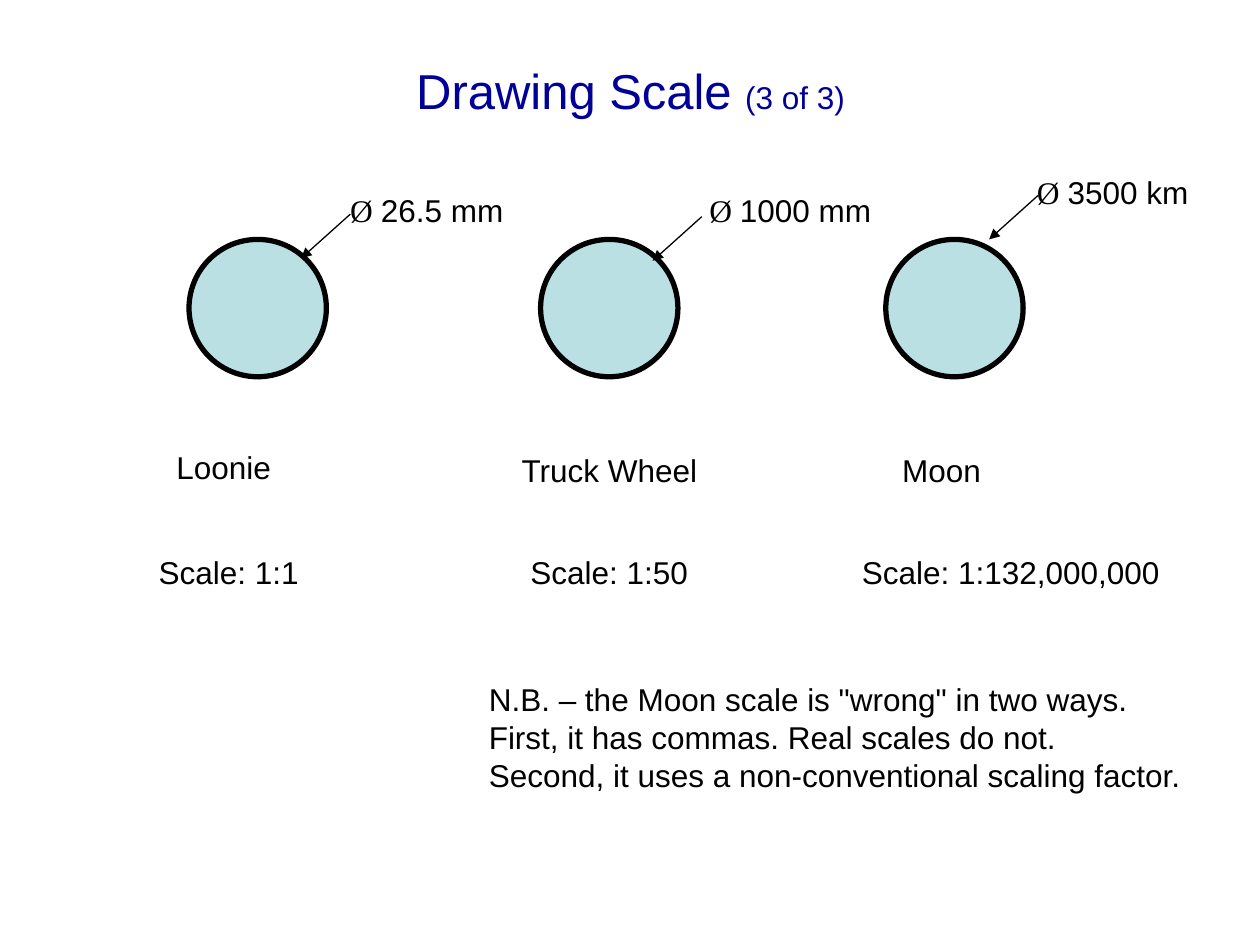
from lxml import etree
from pptx import Presentation
from pptx.dml.color import RGBColor
from pptx.enum.shapes import MSO_CONNECTOR, MSO_SHAPE
from pptx.enum.text import MSO_ANCHOR, PP_ALIGN
from pptx.oxml.ns import qn
from pptx.util import Inches, Pt

LEFT, CENTER = PP_ALIGN.LEFT, PP_ALIGN.CENTER
TOP, MIDDLE = MSO_ANCHOR.TOP, MSO_ANCHOR.MIDDLE
OVAL, STRAIGHT = MSO_SHAPE.OVAL, MSO_CONNECTOR.STRAIGHT
SANS, SERIF = "Arial", "Times New Roman"
BLACK, NAVY, PALE_BLUE = "000000", "000099", "BBE0E3"

presentation = Presentation()
presentation.slide_width = Inches(10)
presentation.slide_height = Inches(7.5)
slide = presentation.slides.add_slide(presentation.slide_layouts[6])

# The grid has 20 columns and 15 rows of equal size
UNIT = presentation.slide_width / 20


def grid(*positions):
    return [round(position * UNIT) for position in positions]


def add_text(paragraphs, box, color=BLACK, align=LEFT, anchor=TOP):
    """Each paragraph is a list of (text, font, size) runs; "\n" breaks the line."""
    frame = slide.shapes.add_textbox(*grid(*box)).text_frame
    frame.word_wrap = True
    frame.vertical_anchor = anchor
    frame.margin_left = frame.margin_right = Inches(0.05)
    frame.margin_top = frame.margin_bottom = Inches(0.05)
    for index, runs in enumerate(paragraphs):
        paragraph = frame.add_paragraph() if index else frame.paragraphs[0]
        paragraph.alignment = align
        for text, font, size in runs:
            for number, line in enumerate(text.split("\n")):
                if number:
                    paragraph.add_line_break()
                run = paragraph.add_run()
                run.text = line
                run.font.name = font
                run.font.size = Pt(size)
                run.font.color.rgb = RGBColor.from_string(color)


# Title
add_text([[("Drawing Scale ", SANS, 28), ("(3 of 3)", SANS, 18)]],
         (0.34, 0.5, 19.34, 1.86), color=NAVY, align=CENTER, anchor=MIDDLE)

# Objects: circle left, arrow tip, then text, left, top and width of each label
DIAMETER, CIRCLE_TOP, LABEL_HEIGHT = 2.18, 3.8, 0.76
ARROW_WIDTH, ARROW_HEIGHT = 0.78, 0.7
objects = [
    (3, (4.78, 4.1), ("26.5 mm", 5.46, 2.94),
     ("Loonie", 2.7, 7.02, 2.46), ("Scale: 1:1", 2.42, 3.14)),
    (8.58, (10.36, 4.14), ("1000 mm", 11.16, 2.94),
     ("Truck Wheel", 8.18, 7.06, 3.62), ("Scale: 1:50", 8.32, 3.14)),
    (14.06, (15.7, 3.8), ("3500 km", 16.36, 2.64),
     ("Moon", 14.22, 7.06, 2.46), ("Scale: 1:132,000,000", 13.58, 5.46)),
]
for circle_left, (tip_x, tip_y), diameter, name, scale in objects:
    # Circle
    circle = slide.shapes.add_shape(
        OVAL, *grid(circle_left, CIRCLE_TOP, DIAMETER, DIAMETER))
    circle.shadow.inherit = False
    circle.fill.solid()
    circle.fill.fore_color.rgb = RGBColor.from_string(PALE_BLUE)
    circle.line.color.rgb = RGBColor.from_string(BLACK)
    circle.line.width = Pt(3)

    # Leader line with its arrowhead at the circle
    leader = slide.shapes.add_connector(STRAIGHT, *grid(
        tip_x, tip_y, tip_x + ARROW_WIDTH, tip_y - ARROW_HEIGHT))
    leader.line.color.rgb = RGBColor.from_string(BLACK)
    leader.line.width = Pt(0.75)
    etree.SubElement(leader.line._get_or_add_ln(), qn("a:headEnd"), type="triangle")
    etree.SubElement(leader._element.spPr, qn("a:effectLst"))

    # Diameter, name and scale
    text, left, top = diameter
    add_text([[("Ø ", SERIF, 18), (text, SANS, 18)]], (left, top, 3.06, LABEL_HEIGHT))
    text, left, top, width = name
    add_text([[(text, SANS, 18)]], (left, top, width, LABEL_HEIGHT))
    text, left, width = scale
    add_text([[(text, SANS, 18)]], (left, 8.68, width, LABEL_HEIGHT))

# Note
add_text([
    [('N.B. – the Moon scale is "wrong" in two ways.\n'
      "First, it has commas. Real scales do not.", SANS, 18)],
    [("Second, it uses a non-conventional scaling factor.", SANS, 18)],
], (7.66, 10.7, 12.34, 1.94))

presentation.save("out.pptx")
